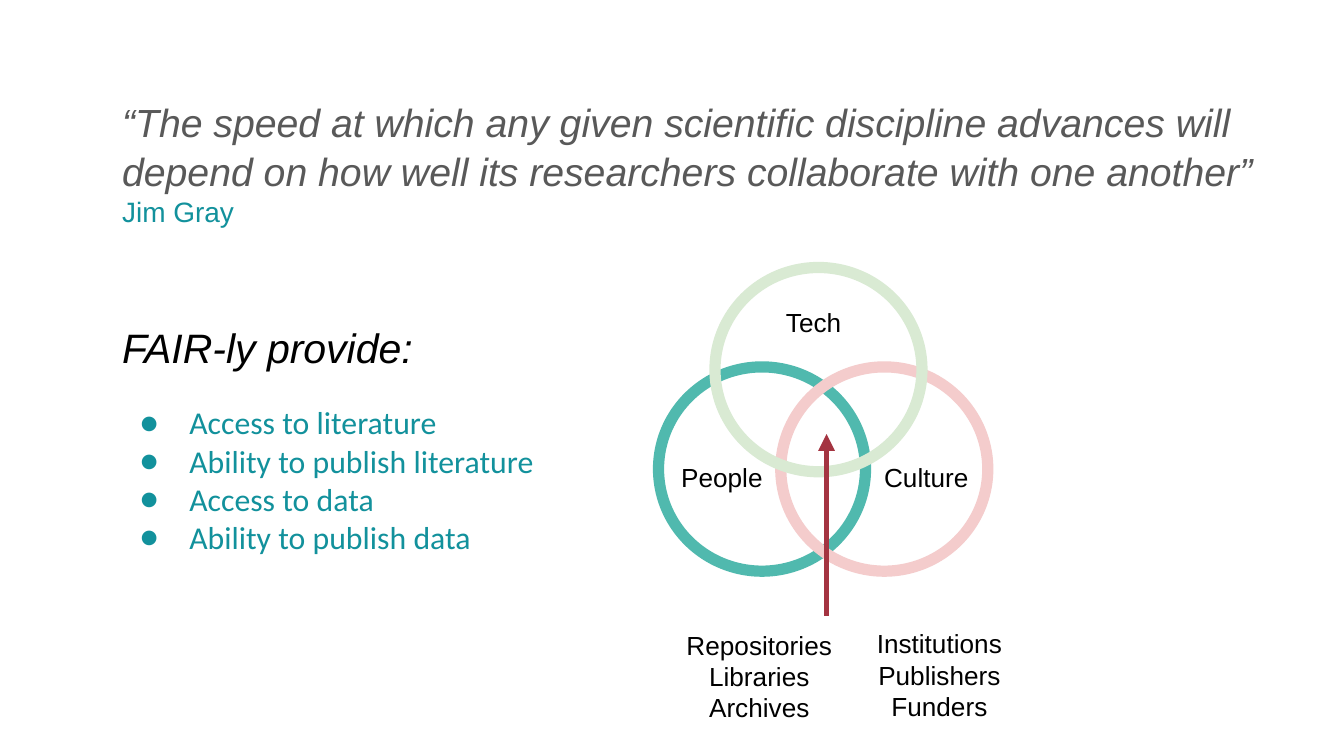
"""Build a slide on collaboration with a quote, a list and a three-circle diagram."""
from lxml import etree
from pptx import Presentation
from pptx import util as u
from pptx.dml.color import RGBColor
from pptx.enum import shapes, text
from pptx.oxml.ns import qn

PX = 4572
COLORS = {"quote": "595959", "ink": "000000", "teal": "12919C", "people": "50B9AE",
          "culture": "F4CCCC", "tech": "D9EAD3", "arrow": "A43441"}


class Deck:
    """Hold the style and the current slide."""

    def __init__(self, width, height):
        self.prs = Presentation()
        self.prs.slide_width, self.prs.slide_height = self.px(width, height)
        self.s = self.prs.slides.add_slide(self.prs.slide_layouts[6])

    def px(self, *lengths):
        """Turn px into EMU."""
        return [u.Emu(n * PX) for n in lengths]

    def color(self, name):
        """Look up a colour."""
        return RGBColor.from_string(COLORS[name])

    def box(self, *at):
        """Add a wrapping text box and return its frame."""
        tf = self.s.shapes.add_textbox(*self.px(*at)).text_frame
        tf.word_wrap = True
        for side in ("left", "top", "right", "bottom"):
            setattr(tf, f"margin_{side}", self.px(20)[0])
        return tf

    def paragraph(self, tf, runs, bullet=False, **formats):
        """Add a paragraph of (text, size, colour, italic, font) runs."""
        p = tf.paragraphs[0] if not tf.paragraphs[0].runs else tf.add_paragraph()
        if bullet:
            self.bullet(p)
        for key, value in formats.items():
            setattr(p, key, value)
        for words, size, color, italic, name in runs:
            r = p.add_run()
            r.text = words
            for key, value in {"size": u.Pt(size), "italic": italic, "name": name}.items():
                setattr(r.font, key, value)
            r.font.color.rgb = self.color(color)

    def bullet(self, p):
        """Give a paragraph a hanging teal bullet."""
        pPr = p._p.get_or_add_pPr()
        left, hang = self.px(100, 74)
        pPr.set("marL", str(left))
        pPr.set("indent", str(-hang))
        bu_color = etree.SubElement(pPr, qn("a:buClr"))
        etree.SubElement(bu_color, qn("a:srgbClr"), val=COLORS["teal"])
        etree.SubElement(pPr, qn("a:buFont"), typeface="Calibri")
        etree.SubElement(pPr, qn("a:buChar"), char="●")

    def label(self, lines, *at, align=text.PP_ALIGN.LEFT):
        """Add a diagram label with one paragraph a line."""
        tf = self.box(*at)
        for line in lines:
            self.paragraph(tf, [(line, 14, "ink", False, "Arial")], alignment=align)

    def ring(self, color, left, top):
        """Add an unfilled circle."""
        sp = self.s.shapes.add_shape(shapes.MSO_SHAPE.OVAL, *self.px(left, top, 308, 304))
        sp.shadow.inherit = False
        sp.fill.background()
        sp.line.color.rgb = self.color(color)
        sp.line.width = u.Pt(6)

    def arrow(self, *ends):
        """Add a line with a triangle at its end."""
        line = self.s.shapes.add_connector(shapes.MSO_CONNECTOR.STRAIGHT, *self.px(*ends))
        line.line.color.rgb = self.color("arrow")
        line.line.width = u.Pt(3)
        etree.SubElement(line.line._get_or_add_ln(), qn("a:tailEnd"), type="triangle")
        etree.SubElement(line._element.spPr, qn("a:effectLst"))


def main():
    """Build and save the slide."""
    deck = Deck(2000, 1125)
    tf = deck.box(162, 126, 1770, 774)
    quote = ("“The speed at which any given scientific discipline advances will "
             "depend on how well its researchers collaborate with one another”")
    deck.paragraph(tf, [(quote, 21, "quote", True, "Arial"), (" ", 22, "ink", True, "Arial"),
                        ("Jim Gray", 15, "teal", False, "Arial")])
    deck.paragraph(tf, [("FAIR-ly provide:", 22, "ink", True, "Arial")], space_before=u.Pt(50.5))
    items = ["Access to literature", "Ability to publish literature",
             "Access to data", "Ability to publish data"]
    for i, item in enumerate(items):
        deck.paragraph(tf, [(item, 17, "teal", False, "Calibri")], bullet=True,
                       space_before=u.Pt(0 if i else 17))

    for color, left, top in [("people", 980, 546), ("culture", 1162, 546), ("tech", 1064, 398)]:
        deck.ring(color, left, top)
    for name, left, top in [("People", 994, 666), ("Culture", 1296, 666), ("Tech", 1150, 436)]:
        deck.label([name], left, top, 168, 88)
    center = text.PP_ALIGN.CENTER
    deck.label(["Repositories", "Libraries", "Archives"], 1000, 916, 260, 182, align=center)
    deck.arrow(1230, 916, 1230, 646)
    deck.label(["Institutions", "Publishers", "Funders"], 1268, 914, 260, 182, align=center)
    deck.prs.save("out.pptx")


if __name__ == "__main__":
    main()
